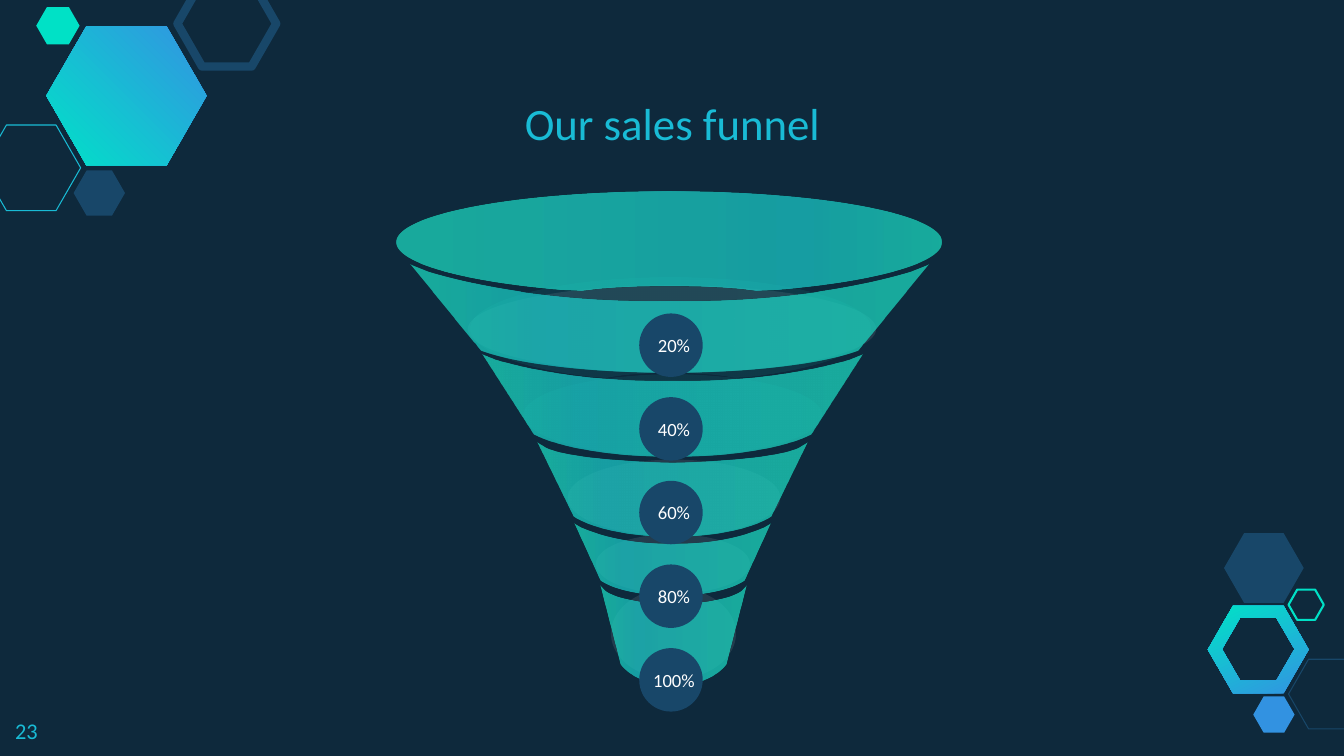
from collections import namedtuple
from dataclasses import dataclass

from lxml.etree import SubElement
from pptx import Presentation
from pptx.dml.color import RGBColor
from pptx.enum.shapes import MSO_SHAPE as SHAPE
from pptx.enum.text import MSO_ANCHOR as ANCHOR, MSO_AUTO_SIZE as AUTO, PP_ALIGN as ALIGN
from pptx.oxml.ns import qn
from pptx.util import Inches, Pt

Box = namedtuple("Box", "x y w h")


@dataclass(frozen=True)
class Theme:
    font: str = "Calibri"
    bg: str = "0E293C"
    accent: str = "19BBD5"
    navy: str = "184769"
    mint: str = "00E1C6"
    blue: str = "3292E1"
    white: str = "FFFFFF"
    hexagon: tuple = ((0, "3393E2"), (100, "00E2C7"))
    wall: tuple = ((0, "1ED7BE"), (75, "1BC5C5"), (100, "1CD9BD"))
    glow: tuple = ((0, "1ED7BE"), (80, "1BC5C5"), (100, "1CD9BD"))
    wall_alpha: int = 74
    glow_alpha: int = 9
    title_size: float = 32
    number_size: float = 16
    label_size: float = 13.3


T = Theme()


def rgb(value):
    return RGBColor.from_string(value)


def add_alpha(color, percent):
    SubElement(color, qn("a:alpha"), val=str(percent * 1000))


def paint(sp, fill=None, line=None, width=1, alpha=100):
    sp.shadow.inherit = False
    if fill:
        sp.fill.solid()
        sp.fill.fore_color.rgb = rgb(fill)
        if alpha < 100:
            add_alpha(sp._element.spPr.find(qn("a:solidFill"))[0], alpha)
    else:
        sp.fill.background()
    if line:
        sp.line.color.rgb = rgb(line)
        sp.line.width = Pt(width)
    else:
        sp.line.fill.background()


def paint_gradient(sp, stops, angle, alpha=100):
    paint(sp)
    sp.fill.gradient()
    grad = sp._element.spPr.find(qn("a:gradFill"))
    for child in list(grad):
        grad.remove(child)
    stop_list = SubElement(grad, qn("a:gsLst"))
    for pos, value in stops:
        stop = SubElement(stop_list, qn("a:gs"), pos=str(pos * 1000))
        color = SubElement(stop, qn("a:srgbClr"), val=value)
        if alpha < 100:
            add_alpha(color, alpha)
    SubElement(grad, qn("a:lin"), ang=str(angle * 60000), scaled="0")


def add_preset(s, kind, box):
    return s.shapes.add_shape(kind, *map(Inches, box))


def add_outline(s, *contours):
    paths = [[(Inches(x), Inches(y)) for x, y in c] for c in contours]
    builder = s.shapes.build_freeform(*paths[0][0], scale=1.0)
    for i, points in enumerate(paths):
        if i:
            builder.move_to(*points[0])
        builder.add_line_segments(points[1:], close=True)
    return builder.convert_to_shape()


def add_symmetric(s, cx, cy, half):
    """Draw a right half, given as segments of one (line) or three (curve) points, and its mirror."""
    points = [p for segment in half for p in segment]
    mirrored = [(-x, y) for x, y in reversed(points[:-1])]
    sizes = [len(segment) for segment in half[1:]]
    sp = add_outline(s, [(cx + x, cy + y) for x, y in points + mirrored])
    lines = iter(list(sp._element.iter(qn("a:lnTo"))))
    for size in sizes + sizes[::-1]:
        first, *rest = [next(lines) for _ in range(size)]
        if rest:
            first.tag = qn("a:cubicBezTo")
        for line in rest:
            first.append(line[0])
            line.getparent().remove(line)
    return sp


def write(sp, text, size, color, align=ALIGN.CENTER, anchor=ANCHOR.MIDDLE, inset_y=0.13):
    tf = sp.text_frame
    frame = {"word_wrap": True, "auto_size": AUTO.NONE, "vertical_anchor": anchor,
             "margin_left": Inches(0.13), "margin_right": Inches(0.13),
             "margin_top": Inches(inset_y), "margin_bottom": Inches(inset_y)}
    for name, value in frame.items():
        setattr(tf, name, value)
    p = tf.paragraphs[0]
    p.alignment = align
    r = p.add_run()
    r.text = text
    for name, value in {"name": T.font, "size": Pt(size)}.items():
        setattr(r.font, name, value)
    r.font.color.rgb = rgb(color)


def add_hexagon(s, box):
    sp = add_preset(s, SHAPE.HEXAGON, box)
    sp.adjustments[0] = 0.287
    return sp


def hexagon_points(x, y, w, h):
    return [(x + w * fx, y + h * fy) for fx, fy in
            ((0, 0.5), (0.25, 0), (0.75, 0), (1, 0.5), (0.75, 1), (0.25, 1))]


def top_left_cluster(s, box):
    big = add_outline(s, hexagon_points(box.x + 0.46, box.y + 0.26, 1.59, 1.38))
    paint_gradient(big, T.hexagon, 135)
    for x, y, w, h, look in (
            (-0.18, 1.24, 0.98, 0.85, {"line": T.accent, "width": 0.75}),
            (0.73, 1.69, 0.51, 0.45, {"fill": T.navy}),
            (1.76, -0.19, 0.98, 0.85, {"line": T.navy, "width": 6}),
            (0.36, 0.07, 0.43, 0.37, {"fill": T.mint})):
        paint(add_hexagon(s, (box.x + x, box.y + y, w, h)), **look)


def bottom_right_cluster(s, box):
    ring = add_outline(s, hexagon_points(box.x, box.y + 0.72, 1, 0.87),
                       hexagon_points(box.x + 0.14, box.y + 0.84, 0.72, 0.62)[::-1])
    paint_gradient(ring, T.hexagon, 244)
    for x, y, w, h, look in (
            (0.8, 1.25, 0.79, 0.69, {"line": T.navy, "width": 0.75}),
            (0.45, 1.62, 0.41, 0.36, {"fill": T.blue}),
            (0.16, 0, 0.79, 0.69, {"fill": T.navy}),
            (0.8, 0.56, 0.35, 0.3, {"line": T.mint, "width": 1.5})):
        paint(add_hexagon(s, (box.x + x, box.y + y, w, h)), **look)


ROUND_RIM = ((0.39, 1.05), (0.72, 0.65), (0.93, 0.2))
FLAT_RIM = ((0.05, 1), (0.72, 0.9), (0.93, 0.28))
LIP = ((0.81, 0.6), (0.43, 1), (0, 1))
NOTCHED_ELLIPSE = (
    ((0, -1),), ((0.55, -1), (1, -0.56), (1, 0)), ((1, 0.42), (0.75, 0.78), (0.39, 0.94)),
    ((0.32, 0.96),), ((0.27, 0.92),), ((0.19, 0.88), (0.1, 0.86), (0, 0.86)))


def scale(points, rx, ry, dy=0):
    return [(x * rx, y * ry + dy) for x, y in points]


def notched_ellipse(s, cx, cy, rx, ry):
    """An ellipse with a shallow arch cut out of its bottom."""
    return add_symmetric(s, cx, cy, [scale(seg, rx, ry) for seg in NOTCHED_ELLIPSE])


def funnel(s, box):
    def inner_ellipse(x, y, w, h):
        return add_preset(s, SHAPE.OVAL, (box.x + x, box.y + y, w, h))

    for inner in ((2.13, 3.93, 1.24, 0.91), (0.71, 0.93, 4.05, 0.87),
                  (1.98, 3.4, 1.53, 0.59), (1.7, 2.66, 2.11, 0.76)):
        paint(inner_ellipse(*inner), T.white, alpha=T.glow_alpha)
    for glow in (inner_ellipse(1.26, 1.82, 2.96, 0.8),
                 notched_ellipse(s, box.x + 2.72, box.y + 1.36, 1.98, 0.51)):
        paint_gradient(glow, T.glow, 180, T.glow_alpha)

    # centre; top y, half width, sag, rim; bottom y, half width, sag
    for cx, top, top_half, dip, rim, bottom, bottom_half, lip in (
            (2.71, 0.73, 2.57, 0.36, ROUND_RIM, 1.58, 1.87, 0.22),
            (2.74, 1.62, 1.88, 0.26, ROUND_RIM, 2.41, 1.37, 0.22),
            (2.74, 2.49, 1.34, 0.2, FLAT_RIM, 3.22, 0.98, 0.2),
            (2.74, 3.29, 0.97, 0.2, ROUND_RIM, 3.86, 0.71, 0.15),
            (2.75, 3.91, 0.72, 0.19, FLAT_RIM, 4.69, 0.52, 0.21)):
        height = bottom - top
        band = add_symmetric(s, box.x + cx, box.y + top, [
            [(0, dip)], scale(rim, top_half, dip), [(top_half, 0)],
            [(bottom_half, height)], scale(LIP, bottom_half, lip, height)])
        paint_gradient(band, T.wall, 180, T.wall_alpha)

    mouth = notched_ellipse(s, box.x + box.w / 2, box.y + 0.5, box.w / 2, 0.5)
    paint_gradient(mouth, T.wall, 0, T.wall_alpha)


def percent_badges(s, box, labels):
    step = (box.h - box.w) / (len(labels) - 1)
    for i, label in enumerate(labels):
        y = box.y + i * step
        paint(add_preset(s, SHAPE.OVAL, (box.x, y, box.w, box.w)), T.navy)
        tb = s.shapes.add_textbox(*map(Inches, (box.x - 0.02, y + 0.14, 0.73, 0.35)))
        write(tb, label, T.label_size, T.white, inset_y=0.07)


def title(s, box, text):
    sp = s.shapes.title
    for name, value in zip(("left", "top", "width", "height"), box):
        setattr(sp, name, Inches(value))
    write(sp, text, T.title_size, T.accent, anchor=ANCHOR.BOTTOM)


def slide_number(s, box, text):
    tb = s.shapes.add_textbox(*map(Inches, box))
    write(tb, text, T.number_size, T.accent, ALIGN.LEFT, ANCHOR.TOP)


def main():
    prs = Presentation()
    prs.slide_width, prs.slide_height = Inches(13.33), Inches(7.5)
    s = prs.slides.add_slide(prs.slide_layouts[5])
    s.background.fill.solid()
    s.background.fill.fore_color.rgb = rgb(T.bg)
    bottom_right_cluster(s, Box(11.98, 5.29, 1.35, 1.98))
    top_left_cluster(s, Box(0, 0, 2.74, 2.14))
    title(s, Box(4.53, 0.67, 4.28, 0.94), "Our sales funnel")
    funnel(s, Box(3.93, 1.9, 5.41, 4.9))
    percent_badges(s, Box(6.34, 3.11, 0.63, 3.95), ("20%", "40%", "60%", "80%", "100%"))
    slide_number(s, Box(0.02, 6.98, 0.8, 0.52), "23")
    prs.save("out.pptx")


if __name__ == "__main__":
    main()
